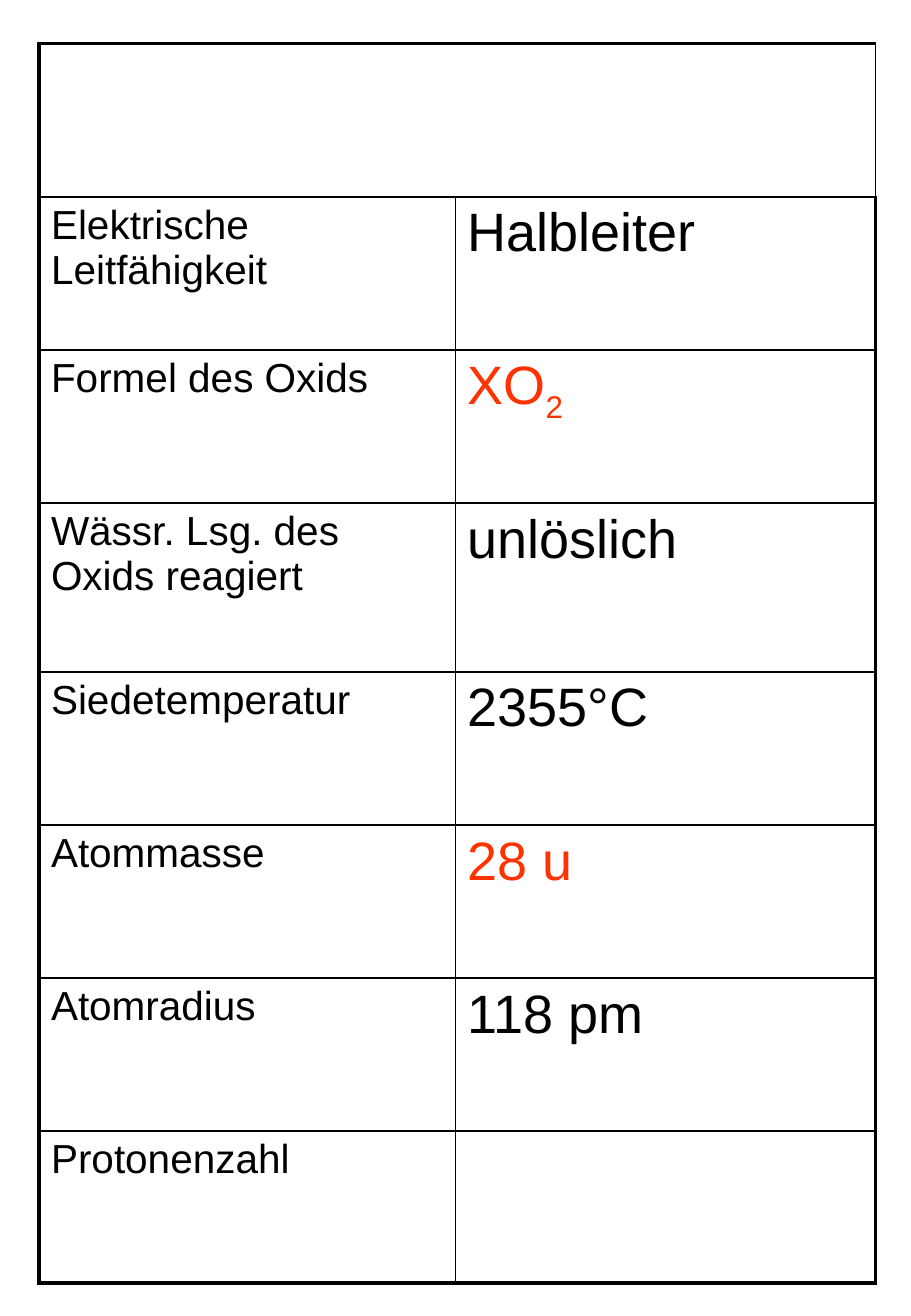
from dataclasses import dataclass

from lxml.etree import SubElement
from pptx import Presentation
from pptx.dml.color import RGBColor
from pptx.oxml.ns import qn
from pptx.util import Inches, Pt


@dataclass(frozen=True)
class Theme:
    font: str = "Arial"
    ink: str = "000000"
    accent: str = "FF3300"
    label_size: int = 24
    value_size: int = 32
    outer_line: float = 2.25
    inner_line: float = 1


# Property, value, subscript, highlighted
PROPERTIES = [
    ("Elektrische Leitfähigkeit", "Halbleiter", "", False),
    ("Formel des Oxids", "XO", "2", True),
    ("Wässr. Lsg. des Oxids reagiert", "unlöslich", "", False),
    ("Siedetemperatur", "2355°C", "", False),
    ("Atommasse", "28 u", "", True),
    ("Atomradius", "118 pm", "", False),
    ("Protonenzahl", "", "", False),
]
COLUMN_WIDTHS = [3.43, 3.46]
ROW_HEIGHTS = [1.26] * 3 + [1.39] + [1.26] * 3 + [1.25]


class CardBuilder:
    def __init__(self, slide, theme):
        self.slide = slide
        self.theme = theme

    def table(self, left, top, widths, heights):
        frame = self.slide.shapes.add_table(
            len(heights), len(widths), Inches(left), Inches(top),
            Inches(sum(widths)), Inches(sum(heights)))
        table = frame.table
        table.first_row = table.horz_banding = False
        for column, width in zip(table.columns, widths):
            column.width = Inches(width)
        for row, height in zip(table.rows, heights):
            row.height = Inches(height)
        # Thick frame, thin inner grid
        last_row, last_column = len(heights) - 1, len(widths) - 1
        for r in range(len(heights)):
            for c in range(len(widths)):
                cell = table.cell(r, c)
                self.borders(cell, {"L": c == 0, "R": c == last_column,
                                    "T": r == 0, "B": r == last_row})
                cell.fill.background()
        return table

    def borders(self, cell, outer_sides):
        properties = cell._tc.get_or_add_tcPr()
        for side, is_outer in outer_sides.items():
            width = self.theme.outer_line if is_outer else self.theme.inner_line
            line = SubElement(properties, qn(f"a:ln{side}"), w=str(Pt(width)))
            fill = SubElement(line, qn("a:solidFill"))
            SubElement(fill, qn("a:srgbClr"), val=self.theme.ink)

    def text(self, cell, text, size, color, subscript=""):
        paragraph = cell.text_frame.paragraphs[0]
        font = paragraph.font
        font.name, font.size = self.theme.font, Pt(size)
        font.color.rgb = RGBColor.from_string(color)
        for content, baseline in ((text, None), (subscript, "-25000")):
            if content:
                run = paragraph.add_run()
                run.text = content
                # Runs in table cells carry the colour over the table style
                run.font.color.rgb = RGBColor.from_string(color)
                if baseline:
                    run.font._element.set("baseline", baseline)


def main():
    presentation = Presentation()
    presentation.slide_width = Inches(7.5)
    presentation.slide_height = Inches(10.83)
    slide = presentation.slides.add_slide(presentation.slide_layouts[6])
    theme = Theme()
    card = CardBuilder(slide, theme)

    # Element card with an empty title row
    table = card.table(0.32, 0.36, COLUMN_WIDTHS, ROW_HEIGHTS)
    table.cell(0, 0).merge(table.cell(0, 1))

    # Property rows
    for row, (label, value, subscript, highlighted) in enumerate(PROPERTIES, 1):
        color = theme.accent if highlighted else theme.ink
        card.text(table.cell(row, 0), label, theme.label_size, theme.ink)
        card.text(table.cell(row, 1), value, theme.value_size, color, subscript)

    presentation.save("out.pptx")


if __name__ == "__main__":
    main()
